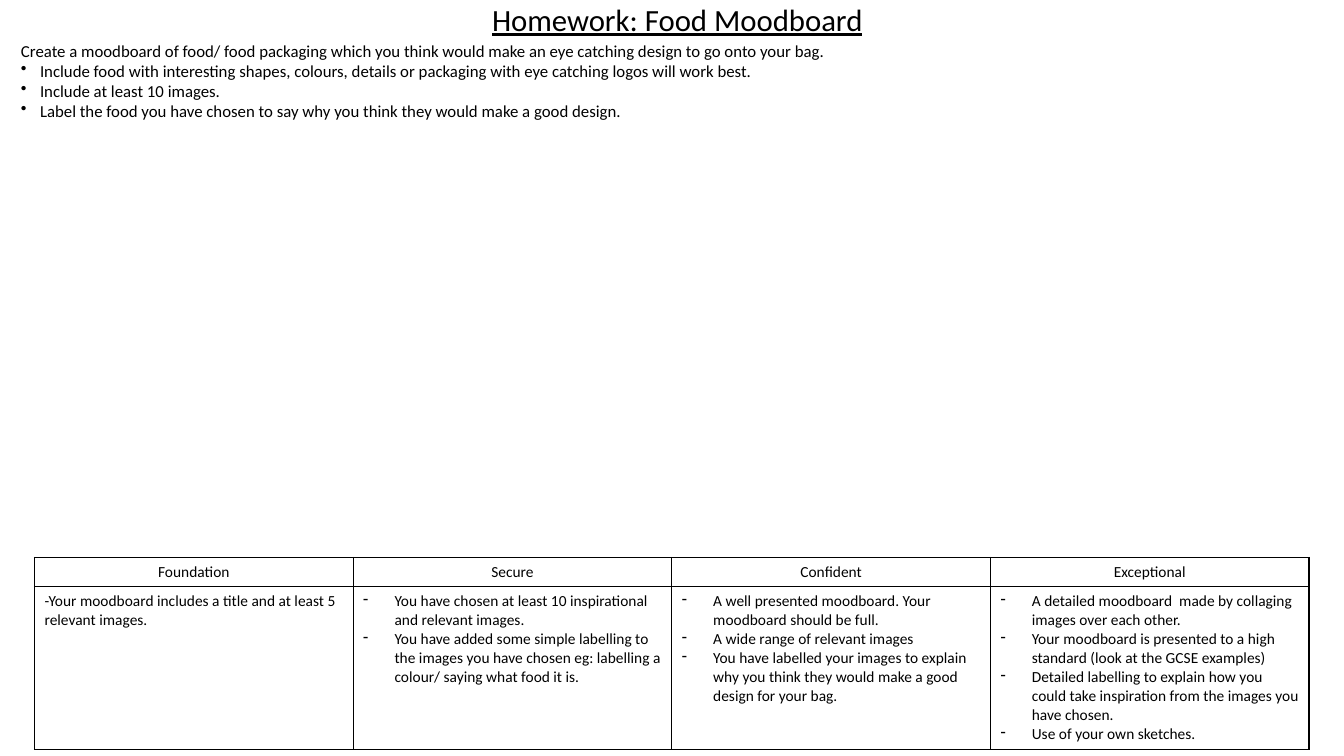
from lxml import etree
from pptx import Presentation
from pptx.dml.color import RGBColor
from pptx.enum.text import MSO_ANCHOR, MSO_AUTO_SIZE, PP_ALIGN
from pptx.oxml.ns import qn
from pptx.util import Cm, Pt

LEFT, CENTER = PP_ALIGN.LEFT, PP_ALIGN.CENTER
TOP = MSO_ANCHOR.TOP
NO_FIT, GROW = MSO_AUTO_SIZE.NONE, MSO_AUTO_SIZE.SHAPE_TO_FIT_TEXT
COLOURS = {"ink": "000000", "paper": "FFFFFF"}
FONT = "Calibri"


def write(frame, lines, size, align=LEFT, bullet=None, indent=0, plain=0):
    for number, line in enumerate(lines):
        paragraph = frame.paragraphs[0] if number == 0 else frame.add_paragraph()
        paragraph.text = line
        paragraph.alignment = align
        paragraph.font.name = FONT
        paragraph.font.size = Pt(size)
        paragraph.font.color.rgb = RGBColor.from_string(COLOURS["ink"])
        if bullet and number >= plain:
            properties = paragraph._p.get_or_add_pPr()
            properties.set("marL", str(Cm(indent)))
            properties.set("indent", str(-Cm(indent)))
            mark = etree.Element(qn("a:buChar"), char=bullet)
            properties.insert_element_before(mark, "a:tabLst", "a:defRPr", "a:extLst")


def draw_borders(cell):
    properties = cell._tc.get_or_add_tcPr()
    for position, side in enumerate(("lnL", "lnR", "lnT", "lnB")):
        border = etree.Element(qn(f"a:{side}"), w=str(Pt(1)))
        fill = etree.SubElement(border, qn("a:solidFill"))
        etree.SubElement(fill, qn("a:srgbClr"), val=COLOURS["ink"])
        properties.insert(position, border)


prs = Presentation()
prs.slide_width = Cm(33.87)
prs.slide_height = Cm(19.05)
slide = prs.slides.add_slide(prs.slide_layouts[5])

title = slide.shapes.title
title.left, title.top, title.width, title.height = Cm(12.3), Cm(-0.08), Cm(33.32), Cm(4.9)
heading = title.text_frame
heading.margin_left = heading.margin_right = Cm(0.1)
heading.margin_top = heading.margin_bottom = Cm(0.1)
heading.vertical_anchor = TOP
heading.auto_size = NO_FIT
write(heading, ["Homework: Food Moodboard"], 22)
heading.paragraphs[0].font.underline = True

levels = {
    "Foundation": ["-Your moodboard includes a title and at least 5 relevant images."],
    "Secure": [
        "You have chosen at least 10 inspirational and relevant images.",
        "You have added some simple labelling to the images you have chosen eg: "
        "labelling a colour/ saying what food it is.",
    ],
    "Confident": [
        "A well presented moodboard. Your moodboard should be full.",
        "A wide range of relevant images",
        "You have labelled your images to explain why you think they would make "
        "a good design for your bag.",
    ],
    "Exceptional": [
        "A detailed moodboard  made by collaging images over each other.",
        "Your moodboard is presented to a high standard (look at the GCSE examples)",
        "Detailed labelling to explain how you could take inspiration from the "
        "images you have chosen.",
        "Use of your own sketches.",
    ],
}
criteria = slide.shapes.add_table(
    2, len(levels), Cm(0.87), Cm(14.05), Cm(32.12), Cm(4.8)
).table
criteria.rows[0].height = Cm(0.58)
criteria.rows[1].height = Cm(4.1)
for column, (level, goals) in enumerate(levels.items()):
    criteria.columns[column].width = Cm(8.03)
    level_cell, goals_cell = criteria.cell(0, column), criteria.cell(1, column)
    for cell in (level_cell, goals_cell):
        cell.fill.solid()
        cell.fill.fore_color.rgb = RGBColor.from_string(COLOURS["paper"])
        draw_borders(cell)
    write(level_cell.text_frame, [level], 11, CENTER)
    level_cell.text_frame.paragraphs[0].font.bold = False
    dash = None if level == "Foundation" else "-"
    write(goals_cell.text_frame, goals, 11, bullet=dash, indent=0.79)

task = slide.shapes.add_textbox(Cm(0.28), Cm(0.89), Cm(33.59), Cm(2.31)).text_frame
task.word_wrap = True
task.auto_size = GROW
write(task, [
    "Create a moodboard of food/ food packaging which you think would make an eye "
    "catching design to go onto your bag.",
    "Include food with interesting shapes, colours, details or packaging with eye "
    "catching logos will work best.",
    "Include at least 10 images.",
    "Label the food you have chosen to say why you think they would make a good design.",
], 12, bullet="•", indent=0.48, plain=1)

prs.save("out.pptx")
